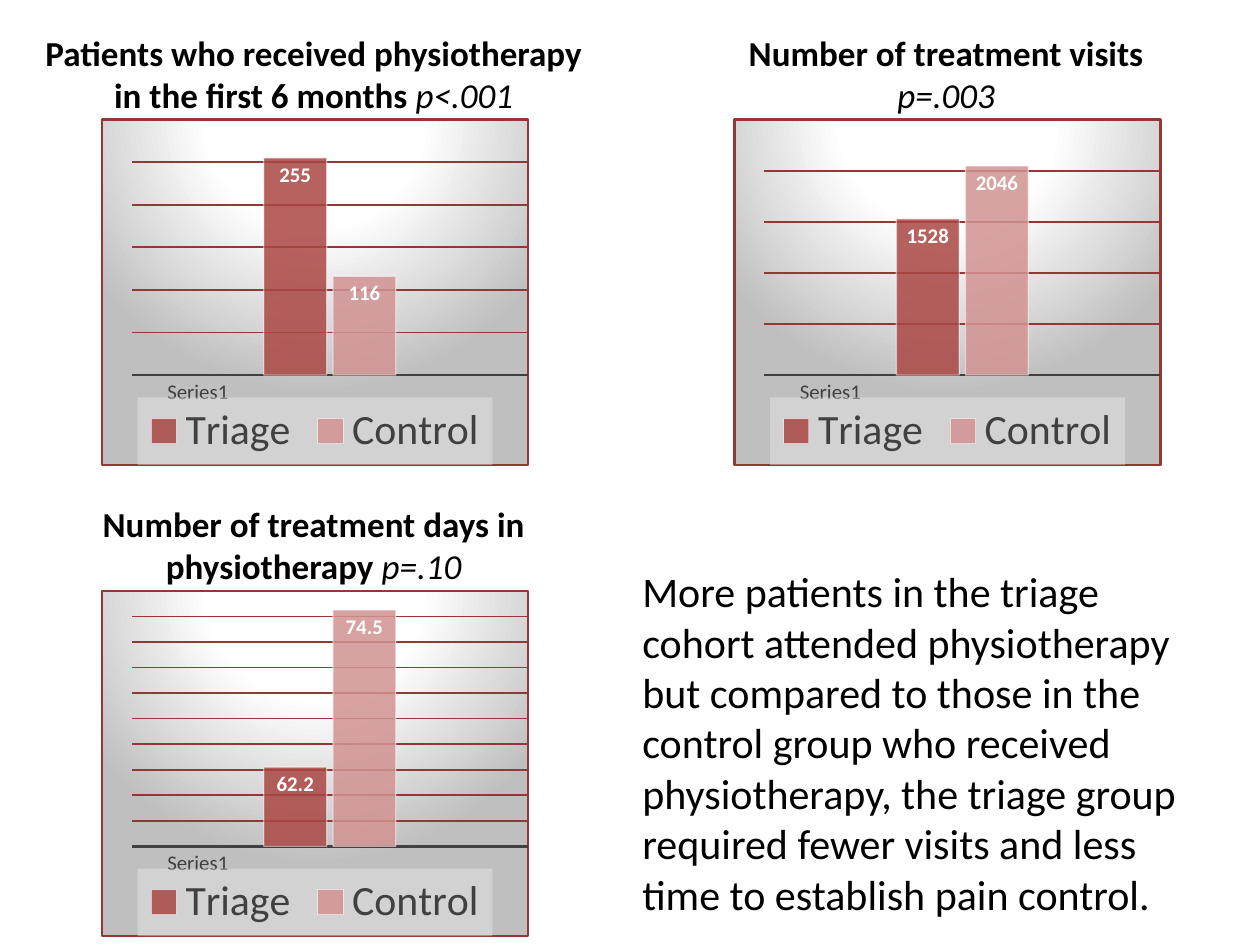
from dataclasses import dataclass

from lxml.etree import SubElement as Sub
from pptx import Presentation
from pptx.chart.data import CategoryChartData as Data
from pptx.dml.color import RGBColor as RGB
from pptx.enum.chart import XL_CHART_TYPE as Kind
from pptx.enum.chart import XL_LABEL_POSITION as Spot
from pptx.enum.chart import XL_LEGEND_POSITION as Side
from pptx.enum.chart import XL_TICK_MARK as Tick
from pptx.enum.text import MSO_AUTO_SIZE as Fit
from pptx.enum.text import PP_ALIGN as Align
from pptx.oxml import parse_xml
from pptx.oxml.ns import nsdecls, qn
from pptx.util import Inches, Pt


@dataclass(frozen=True)
class Theme:
    face: str = "Calibri"
    ink: str = "000000"
    grey: str = "404040"
    white: str = "FFFFFF"
    shade: str = "BFBFBF"
    pale: str = "F2F2F2"
    edge: str = "953735"
    bars: tuple = ("AA4744", "D19392")
    head: int = 20
    body: int = 24
    key: int = 24
    note: int = 12
    base: int = 10


class Deck:
    """Holds the theme and the current slide, and adds each kind of element."""

    def __init__(self, theme):
        self.theme = theme
        self.show = Presentation()
        self.show.slide_width, self.show.slide_height = Inches(10), Inches(7.5)
        self.slide = self.show.slides.add_slide(self.show.slide_layouts[6])

    def font(self, font, size, color, bold=False):
        font.name, font.size, font.bold = self.theme.face, Pt(size), bold
        font.color.rgb = RGB.from_string(color)

    def line(self, line, color, width):
        line.color.rgb = RGB.from_string(color)
        line.width = Pt(width)

    def fade(self, part, where, share):
        for color in part.xpath(where):
            Sub(color, qn("a:alpha"), val=str(share * 1000))

    def text(self, left, top, high, lines, size, align=Align.LEFT):
        box = self.slide.shapes.add_textbox(
            Inches(left), Inches(top), Inches(4.6), Inches(high))
        frame = box.text_frame
        frame.word_wrap, frame.auto_size = True, Fit.SHAPE_TO_FIT_TEXT
        for i, runs in enumerate(lines):
            para = frame.add_paragraph() if i else frame.paragraphs[0]
            para.alignment = align
            self.font(para.font, size, self.theme.ink)
            for words, bold, slant in runs:
                run = para.add_run()
                run.text = words
                self.font(run.font, size, self.theme.ink, bold)
                run.font.italic = slant

    def chart(self, left, top, values, scale):
        look = self.theme
        data = Data()
        data.categories = ["Series1", "", ""]
        for name, value in zip(("Triage", "Control"), values):
            data.add_series(name, (None, value, None))
        chart = self.slide.shapes.add_chart(
            Kind.COLUMN_CLUSTERED, Inches(left), Inches(top),
            Inches(3.4), Inches(2.76), data).chart
        self.font(chart.font, look.base, look.ink)
        chart.has_title = False
        self.axes(chart, scale)
        plot = chart.plots[0]
        plot.gap_width, plot.overlap = 0, -10
        plot.vary_by_categories = False
        for ser, color in zip(plot.series, look.bars):
            self.bar(ser, color)
        self.legend(chart)
        self.frame(chart)

    def axes(self, chart, scale):
        look, cat, val = self.theme, chart.category_axis, chart.value_axis
        cat.major_tick_mark = cat.minor_tick_mark = Tick.NONE
        self.font(cat.tick_labels.font, look.note, look.grey)
        self.line(cat.format.line, look.grey, 1.5)
        val.minimum_scale, val.maximum_scale, val.major_unit = scale
        val.has_major_gridlines = True
        self.line(val.major_gridlines.format.line, look.edge, 1)
        val.visible = False

    def bar(self, ser, color):
        look = self.theme
        ser.format.fill.solid()
        ser.format.fill.fore_color.rgb = RGB.from_string(color)
        self.line(ser.format.line, look.white, 0.75)
        self.fade(ser._element, "c:spPr/a:solidFill/a:srgbClr", 85)
        self.fade(ser._element, "c:spPr/a:ln/a:solidFill/a:srgbClr", 50)
        tags = ser.data_labels
        tags.show_value, tags.position = True, Spot.INSIDE_END
        self.font(tags.font, look.note, look.white, True)

    def legend(self, chart):
        look = self.theme
        chart.has_legend = True
        key = chart.legend
        key.position, key.include_in_layout = Side.BOTTOM, False
        self.font(key.font, look.key, look.grey)
        key._element.find(qn("c:txPr")).addprevious(parse_xml(
            f'<c:spPr {nsdecls("c", "a")}><a:solidFill><a:srgbClr val="{look.pale}">'
            '<a:alpha val="39000"/></a:srgbClr></a:solidFill></c:spPr>'))

    def frame(self, chart):
        look, root = self.theme, chart._chartSpace
        area = root.find(qn("c:chart")).find(qn("c:plotArea"))
        for old in area.findall(qn("c:layout")):
            area.remove(old)
        rules = (("layoutTarget", "inner"), ("xMode", "edge"), ("yMode", "edge"),
                 ("x", 0.07), ("y", 0), ("w", 0.93), ("h", 0.74))
        body = "".join(f'<c:{name} val="{value}"/>' for name, value in rules)
        area.insert(0, parse_xml(
            f'<c:layout {nsdecls("c")}><c:manualLayout>{body}'
            '</c:manualLayout></c:layout>'))
        stops = ((0, look.white), (39, look.white), (100, look.shade))
        fades = "".join(f'<a:gs pos="{spot * 1000}"><a:srgbClr val="{color}"/></a:gs>'
                        for spot, color in stops)
        root.find(qn("c:chart")).addnext(parse_xml(
            f'<c:spPr {nsdecls("c", "a")}><a:gradFill><a:gsLst>{fades}</a:gsLst>'
            '<a:path path="circle"><a:fillToRect l="50000" t="-80000" r="50000"'
            ' b="180000"/></a:path></a:gradFill>'
            f'<a:ln w="{Pt(1.5)}"><a:solidFill><a:srgbClr val="{look.edge}"/>'
            '</a:solidFill></a:ln></c:spPr>'))

    def panel(self, left, top, lines, values, scale):
        self.chart(left + 0.61, top + 0.74, values, scale)
        self.text(left, top, 0.77, lines, self.theme.head, Align.CENTER)


def main():
    theme = Theme()
    deck = Deck(theme)
    deck.panel(0.19, 0.2, [[
        ("Patients who received physiotherapy in the first 6 months ", True, False),
        ("p<.001", False, True)]], (255, 116), (0, 300, 50))
    deck.panel(5.21, 0.2, [
        [("Number of treatment visits", True, False)],
        [("p=.003", False, True)]], (1528, 2046), (0, 2500, 500))
    deck.panel(0.19, 3.94, [[
        ("Number of treatment days in physiotherapy ", True, False),
        ("p=.10", False, True)]], (62.2, 74.5), (56, 76, 2))
    deck.text(5, 4.44, 2.93, [[(
        "More patients in the triage cohort attended physiotherapy but compared "
        "to those in the control group who received physiotherapy, the triage "
        "group required fewer visits and less time to establish pain control.",
        False, False)]], theme.body)
    deck.show.save("out.pptx")


if __name__ == "__main__":
    main()
